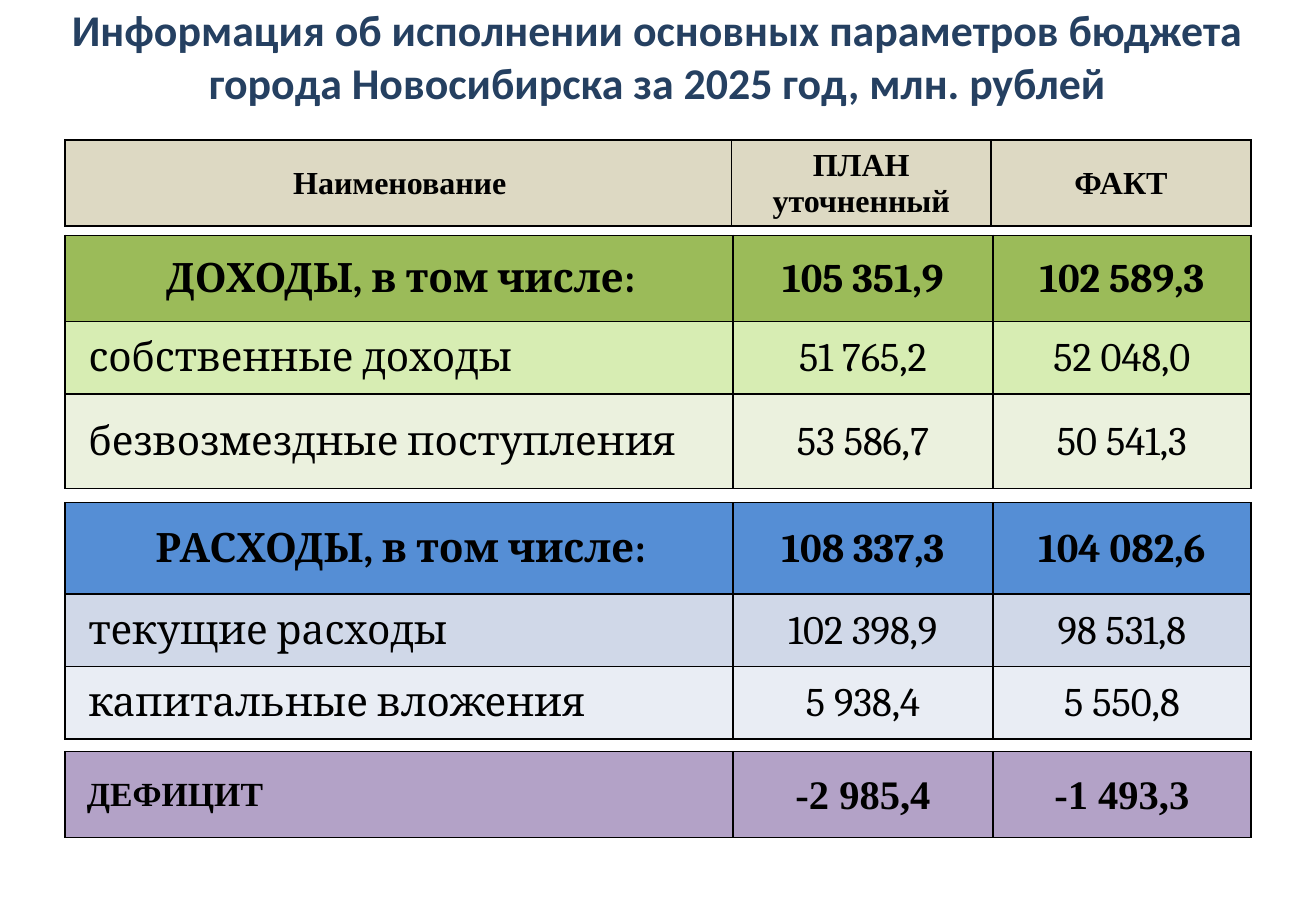
from dataclasses import dataclass

from lxml.etree import SubElement
from pptx import Presentation
from pptx.dml.color import RGBColor
from pptx.enum.text import MSO_ANCHOR, PP_ALIGN
from pptx.oxml.ns import qn
from pptx.util import Pt


@dataclass(frozen=True)
class Theme:
    title_font: str = "Calibri"
    body_font: str = "Cambria"
    accent_font: str = "Times New Roman"
    title_size: float = 26
    header_size: float = 19
    deficit_size: float = 20
    body_size: float = 24
    title: str = "254061"
    ink: str = "000000"
    header: str = "DDD9C3"
    income: str = "9BBB59"
    own_income: str = "D7EDB3"
    grants: str = "EBF1DE"
    spending: str = "558ED5"
    current: str = "D0D8E8"
    capital: str = "E9EDF4"
    deficit: str = "B3A2C7"


THEME = Theme()


@dataclass(frozen=True)
class BudgetRow:
    label: str
    plan: str
    fact: str
    height: float
    fill: str
    bold: bool = False
    indent: float = 0  # zero centres the label
    font: str = THEME.body_font
    label_size: float = THEME.body_size
    value_size: float = THEME.body_size


@dataclass(frozen=True)
class Section:
    top: float
    rows: tuple[BudgetRow, ...]
    widths: tuple[float, ...] = (396, 154, 153)


TABLE_LEFT = 38.5
BORDER_WIDTH = 1

SECTIONS = (
    Section(83, (
        BudgetRow("Наименование", "ПЛАН\nуточненный", "ФАКТ", 51, THEME.header, True,
                  font=THEME.accent_font, label_size=THEME.header_size,
                  value_size=THEME.header_size),
    ), (395, 154, 154)),
    Section(139.5, (
        BudgetRow("ДОХОДЫ, в том числе:", "105 351,9", "102 589,3", 51, THEME.income, True),
        BudgetRow("собственные доходы", "51 765,2", "52 048,0", 43, THEME.own_income, indent=11),
        BudgetRow("безвозмездные поступления", "53 586,7", "50 541,3", 56, THEME.grants,
                  indent=11),
    )),
    Section(298, (
        BudgetRow("РАСХОДЫ, в том числе:", "108 337,3", "104 082,6", 54, THEME.spending, True),
        BudgetRow("текущие расходы", "102 398,9", "98 531,8", 43, THEME.current, indent=11),
        BudgetRow("капитальные вложения", "5 938,4", "5 550,8", 43, THEME.capital, indent=11),
    )),
    Section(445.5, (
        BudgetRow("ДЕФИЦИТ", "-2 985,4", "-1 493,3", 51, THEME.deficit, True, indent=10,
                  font=THEME.accent_font, label_size=THEME.deficit_size),
    )),
)


def write(frame, text: str, font: str, size: float, color: str, bold: bool, align) -> None:
    for number, line in enumerate(text.split("\n")):
        paragraph = frame.add_paragraph() if number else frame.paragraphs[0]
        paragraph.alignment = align
        run = paragraph.add_run()
        run.text = line
        run.font.name = font
        run.font.size = Pt(size)
        run.font.bold = bold
        run.font.color.rgb = RGBColor.from_string(color)


def add_borders(cell) -> None:
    properties = cell._tc.get_or_add_tcPr()
    for position, side in enumerate(("a:lnL", "a:lnR", "a:lnT", "a:lnB")):
        line = SubElement(properties, qn(side), w=str(Pt(BORDER_WIDTH)))
        fill = SubElement(line, qn("a:solidFill"))
        SubElement(fill, qn("a:srgbClr"), val=THEME.ink)
        properties.insert(position, line)  # borders come before the fill


def add_section(slide, section: Section) -> None:
    table = slide.shapes.add_table(
        len(section.rows), len(section.widths), Pt(TABLE_LEFT), Pt(section.top),
        Pt(sum(section.widths)), Pt(sum(row.height for row in section.rows))).table
    table.first_row = table.horz_banding = False
    for column, width in zip(table.columns, section.widths):
        column.width = Pt(width)
    for row_index, row in enumerate(section.rows):
        table.rows[row_index].height = Pt(row.height)
        for column_index, text in enumerate((row.label, row.plan, row.fact)):
            is_label = column_index == 0
            cell = table.cell(row_index, column_index)
            cell.fill.solid()
            cell.fill.fore_color.rgb = RGBColor.from_string(row.fill)
            add_borders(cell)
            cell.vertical_anchor = MSO_ANCHOR.MIDDLE
            cell.margin_left = Pt(3 + row.indent if is_label else 1)
            cell.margin_top = cell.margin_right = Pt(1)
            cell.margin_bottom = Pt(0)
            write(cell.text_frame, text, row.font,
                  row.label_size if is_label else row.value_size, THEME.ink, row.bold,
                  PP_ALIGN.LEFT if is_label and row.indent else PP_ALIGN.CENTER)


def add_title(slide) -> None:
    frame = slide.shapes.add_textbox(Pt(21.5), Pt(0), Pt(737), Pt(66)).text_frame
    frame.word_wrap = True
    frame.vertical_anchor = MSO_ANCHOR.MIDDLE
    write(frame, "Информация об исполнении основных параметров бюджета "
                 "города Новосибирска за 2025 год, млн. рублей",
          THEME.title_font, THEME.title_size, THEME.title, True, PP_ALIGN.CENTER)


def main() -> None:
    deck = Presentation()
    deck.slide_width, deck.slide_height = Pt(780), Pt(540)
    slide = deck.slides.add_slide(deck.slide_layouts[6])
    # Heading
    add_title(slide)
    # Column heads, income, spending and deficit
    for section in SECTIONS:
        add_section(slide, section)
    deck.save("out.pptx")


if __name__ == "__main__":
    main()
